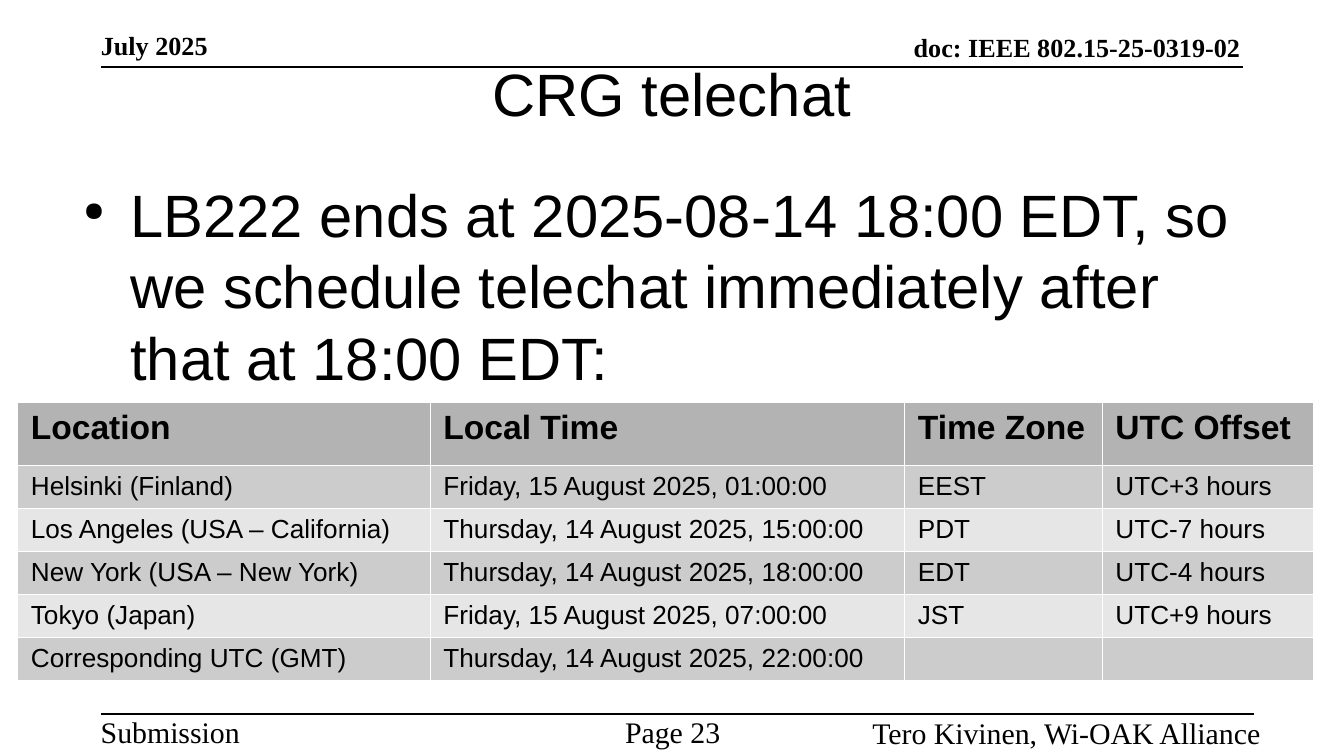
from typing import NamedTuple

from lxml import etree
from pptx import Presentation, util as u
from pptx.dml.color import RGBColor
from pptx.enum import shapes, text
from pptx.oxml.ns import qn

HUES = {"ink": "000000", "rule": "FFFFFF", "head": "B3B3B3",
        "dark": "CCCCCC", "light": "E6E6E6"}
SANS, SERIF = "Arial", "Times New Roman"
LEFT, MID, RIGHT = text.PP_ALIGN.LEFT, text.PP_ALIGN.CENTER, text.PP_ALIGN.RIGHT
TOP, LOW = text.MSO_ANCHOR.TOP, text.MSO_ANCHOR.BOTTOM
WIDE = 10


class Box(NamedTuple):
    left: float
    top: float
    width: float
    height: float


class Label(NamedTuple):
    words: str
    box: Box
    align: text.PP_ALIGN
    size: int
    bold: bool
    anchor: text.MSO_ANCHOR


class Rule(NamedTuple):
    left: float
    right: float
    top: float


LABELS = [
    Label("July 2025", Box(0.75, 0.3, 2.79, 0.15), LEFT, 14, True, LOW),
    Label("doc: IEEE 802.15-25-0319-02", Box(3.39, 0.32, 5.84, 0.15), RIGHT, 14, True, LOW),
    Label("Submission", Box(0.75, 5.31, 1.87, 0.23), LEFT, 16, False, TOP),
    Label("Page 23", Box(4.07, 5.31, 1.87, 0.23), MID, 16, False, TOP),
    Label("Tero Kivinen, Wi-OAK Alliance", Box(5.71, 5.32, 3.67, 0.23), RIGHT, 16, False, TOP),
]
RULES = [Rule(0.75, 9.25, 0.5), Rule(0.75, 9.33, 5.31)]

COLS = [3.07, 3.53, 1.47, 1.57]
TALL, LINE = 0.47, 0.32
ZONES = [
    ("Location", "Local Time", "Time Zone", "UTC Offset"),
    ("Helsinki (Finland)", "Friday, 15 August 2025, 01:00:00", "EEST", "UTC+3 hours"),
    ("Los Angeles (USA – California)", "Thursday, 14 August 2025, 15:00:00", "PDT", "UTC-7 hours"),
    ("New York (USA – New York)", "Thursday, 14 August 2025, 18:00:00", "EDT", "UTC-4 hours"),
    ("Tokyo (Japan)", "Friday, 15 August 2025, 07:00:00", "JST", "UTC+9 hours"),
    ("Corresponding UTC (GMT)", "Thursday, 14 August 2025, 22:00:00", "", ""),
]


def hue(name: str) -> RGBColor:
    return RGBColor.from_string(HUES[name])


def write(frame, words: str, *, font=SANS, size=14, bold=False, align=LEFT):
    para = frame.paragraphs[0]
    para.alignment = align
    if words:
        run = para.add_run()
        run.text = words
        run.font.name, run.font.size, run.font.bold = font, u.Pt(size), bold
        run.font.color.rgb = hue("ink")
    else:  # keeps an empty cell from growing to the default size
        etree.SubElement(para._p, qn("a:endParaRPr"), sz=str(size * 100))
    return para


def add_text(slide, words: str, box: Box, anchor=TOP, **style):
    shape = slide.shapes.add_textbox(*map(u.Inches, box))
    frame = shape.text_frame
    frame.word_wrap = True
    frame.vertical_anchor = anchor
    frame.margin_left = frame.margin_right = 0
    frame.margin_top = frame.margin_bottom = 0
    return write(frame, words, **style)


def add_rule(slide, rule: Rule) -> None:
    ends = map(u.Inches, (rule.left, rule.top, rule.right, rule.top))
    line = slide.shapes.add_connector(shapes.MSO_CONNECTOR.STRAIGHT, *ends)
    line.line.color.rgb = hue("ink")
    line.line.width = u.Pt(1)
    etree.SubElement(line._element.spPr, qn("a:effectLst"))


def add_bullet(para) -> None:
    props = para._p.get_or_add_pPr()
    props.set("marL", str(u.Inches(0.47)))
    props.set("indent", str(u.Inches(-0.35)))
    tint = etree.SubElement(props, qn("a:buClr"))
    etree.SubElement(tint, qn("a:srgbClr"), val=HUES["ink"])
    etree.SubElement(props, qn("a:buSzPct"), val="45000")
    etree.SubElement(props, qn("a:buChar"), char="●")


def edge(cell) -> None:
    """Draw thin borders, which must come before the cell fill in the XML."""
    props = cell._tc.get_or_add_tcPr()
    for side in ("lnL", "lnR", "lnT", "lnB"):
        line = etree.SubElement(props, qn(f"a:{side}"), w=str(u.Pt(0.06)))
        fill = etree.SubElement(line, qn("a:solidFill"))
        etree.SubElement(fill, qn("a:srgbClr"), val=HUES["rule"])


def add_zones(slide) -> None:
    high = TALL + LINE * (len(ZONES) - 1)
    box = Box(0.13, 2.99, sum(COLS), high)
    grid = slide.shapes.add_table(len(ZONES), len(COLS), *map(u.Inches, box)).table
    for col, width in zip(grid.columns, COLS):
        col.width = u.Inches(width)
    for i, row in enumerate(ZONES):
        head = i == 0
        grid.rows[i].height = u.Inches(TALL if head else LINE)
        shade = "head" if head else "dark" if i % 2 else "light"
        for j, words in enumerate(row):
            cell = grid.cell(i, j)
            edge(cell)
            cell.fill.solid()
            cell.fill.fore_color.rgb = hue(shade)
            cell.margin_left = cell.margin_right = u.Inches(0.1)
            cell.margin_top, cell.margin_bottom = u.Inches(0.05), u.Inches(0.03)
            write(cell.text_frame, words, size=18 if head else 14, bold=head)


def main() -> None:
    deck = Presentation()
    deck.slide_width, deck.slide_height = u.Inches(WIDE), u.Inches(WIDE * 9 / 16)
    slide = deck.slides.add_slide(deck.slide_layouts[6])
    for rule in RULES:
        add_rule(slide, rule)
    for tag in LABELS:
        add_text(slide, tag.words, tag.box, tag.anchor, font=SERIF,
                 size=tag.size, bold=tag.bold, align=tag.align)
    add_text(slide, "CRG telechat", Box(0.5, 0.22, 9, 0.94),
             text.MSO_ANCHOR.MIDDLE, size=32, align=MID)
    note = add_text(slide, "LB222 ends at 2025-08-14 18:00 EDT, so we schedule "
                    "telechat immediately after that at 18:00 EDT:",
                    Box(0.5, 1.32, 9, 3.26), size=32)
    add_bullet(note)
    add_zones(slide)
    deck.save("out.pptx")


if __name__ == "__main__":
    main()
